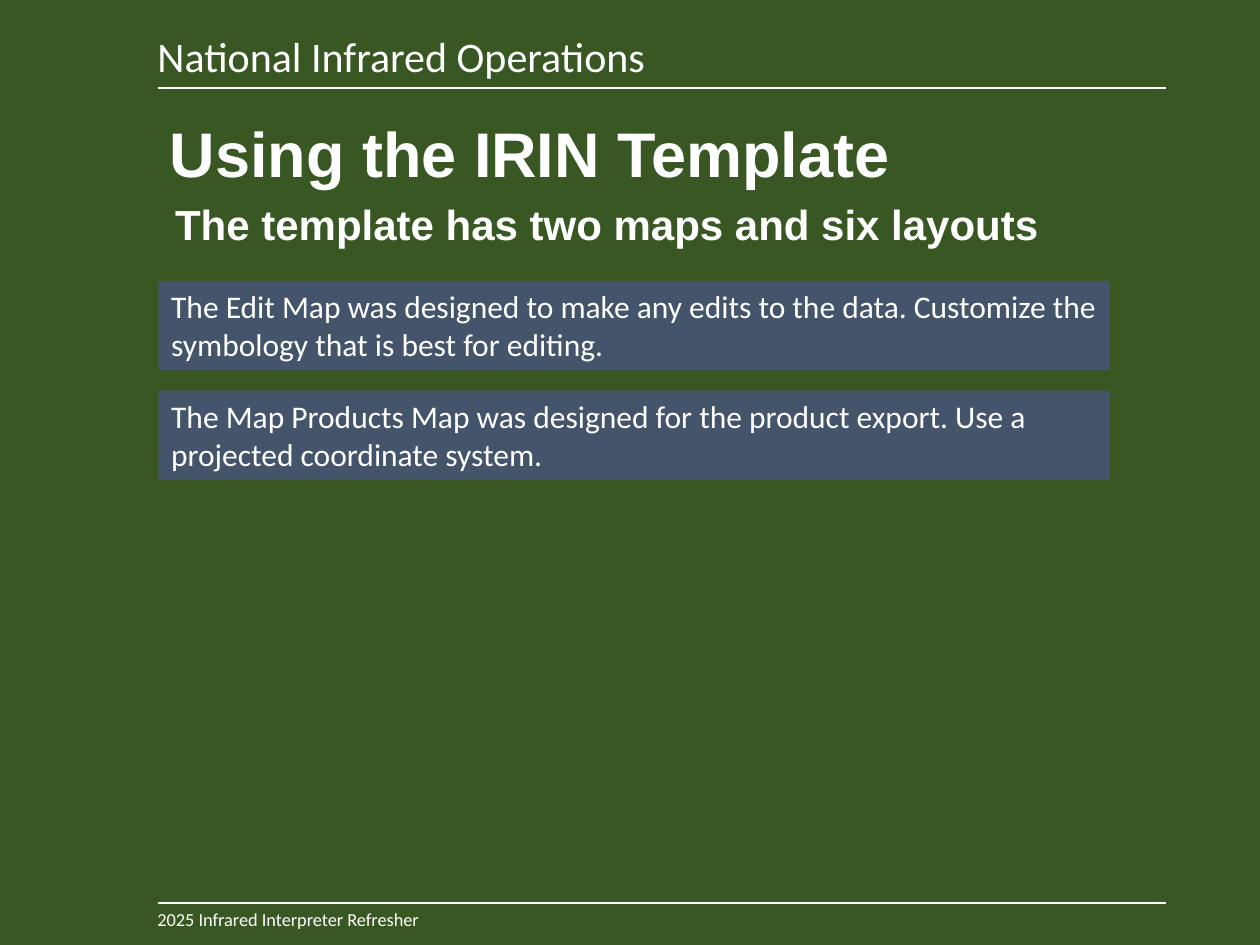
from dataclasses import dataclass
from lxml import etree
from pptx import Presentation
from pptx import util as u
from pptx.dml.color import RGBColor
from pptx.enum import shapes, text
from pptx.oxml.ns import qn

WIDE, HIGH = 10, 7.5
LEFT, SPAN = 0.125, 0.8
WHITE, GREEN, SLATE = "FFFFFF", "385723", "44546A"


@dataclass
class Label:
    words: str
    left: float
    top: float
    width: float
    height: float
    size: float
    font: str = "Calibri"
    bold: bool = False
    fill: str = ""
    inset: tuple = (0.1, 0.05)
    pitch: float = 1.0
    middle: bool = False


def color(code: str) -> RGBColor:
    return RGBColor.from_string(code)


def across(share: float) -> int:
    return u.Inches(WIDE * share)


def down(share: float) -> int:
    return u.Inches(HIGH * share)


def write(slide, item: Label) -> None:
    area = (across(item.left), down(item.top / HIGH),
            across(item.width), down(item.height / HIGH))
    if item.fill:
        box = slide.shapes.add_shape(shapes.MSO_SHAPE.RECTANGLE, *area)
        box.shadow.inherit = False
        box.fill.solid()
        box.fill.fore_color.rgb = color(item.fill)
        box.line.fill.background()
    else:
        box = slide.shapes.add_textbox(*area)
    frame = box.text_frame
    frame.word_wrap = True
    frame.margin_left, frame.margin_top = map(u.Inches, item.inset)
    anchor = text.MSO_ANCHOR
    frame.vertical_anchor = anchor.MIDDLE if item.middle else anchor.TOP
    para = frame.paragraphs[0]
    para.text = item.words
    para.alignment = text.PP_ALIGN.LEFT
    para.line_spacing = item.pitch
    font = para.font
    font.name, font.size, font.bold = item.font, u.Pt(item.size), item.bold
    font.color.rgb = color(WHITE)


def rule(slide, top: float) -> None:
    y = down(top / HIGH)
    line = slide.shapes.add_connector(
        shapes.MSO_CONNECTOR.STRAIGHT, across(LEFT), y, across(LEFT + SPAN), y)
    line.line.color.rgb = color(WHITE)
    line.line.width = u.Pt(1.25)
    etree.SubElement(line._element.spPr, qn("a:effectLst"))


def main() -> None:
    deck = Presentation()
    deck.slide_width, deck.slide_height = across(1), down(1)
    slide = deck.slides.add_slide(deck.slide_layouts[6])
    back = slide.background.fill
    back.solid()
    back.fore_color.rgb = color(GREEN)

    edge = (0, 0.04)
    heads = [
        Label("2025 Infrared Interpreter Refresher", LEFT, 7.17, SPAN, 0.24,
              10.5, inset=edge),
        Label("National Infrared Operations", LEFT, 0.2, SPAN, 0.35,
              24, inset=edge),
        Label("Using the IRIN Template", LEFT, 0.86, 0.81, 0.77,
              36, "Arial", True, pitch=0.9, middle=True),
        Label("The template has two maps and six layouts", 0.12, 1.57, 0.76, 0.5,
              24, "Arial", True, inset=(0.19, 0.05), pitch=0.9),
    ]
    notes = [
        "The Edit Map was designed to make any edits to the data. "
        "Customize the symbology that is best for editing.",
        "The Map Products Map was designed for the product export. "
        "Use a projected coordinate system.",
    ]
    cards = [Label(note, 0.126, 2.23 + 0.87 * row, 0.755, 0.71, 18, fill=SLATE)
             for row, note in enumerate(notes)]

    for top in (7.17, 0.7):
        rule(slide, top)
    for item in heads + cards:
        write(slide, item)
    deck.save("out.pptx")


if __name__ == "__main__":
    main()
